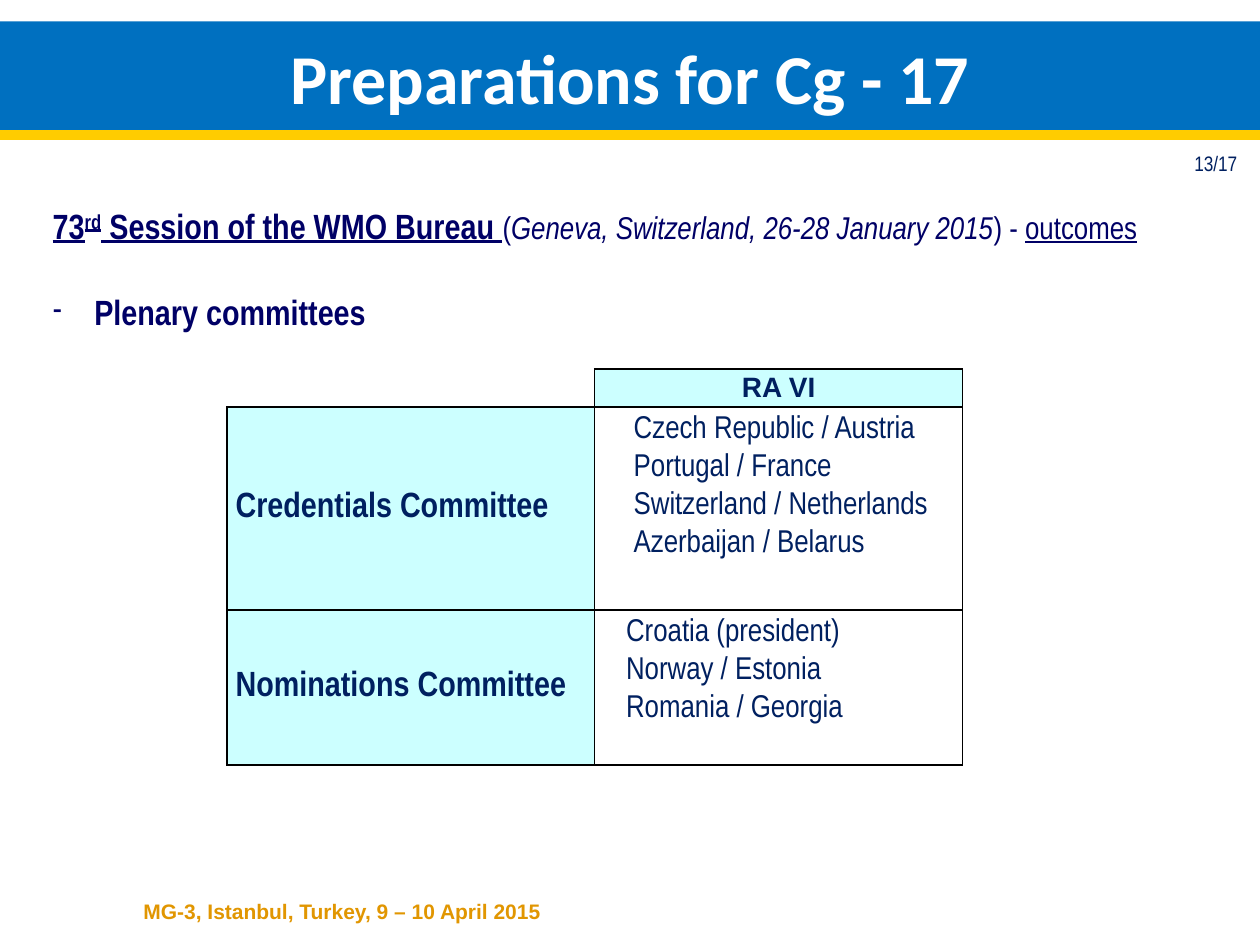
from dataclasses import dataclass

from lxml import etree
from pptx import Presentation, util as u
from pptx.dml.color import RGBColor
from pptx.enum import shapes, text
from pptx.oxml.ns import qn


@dataclass(frozen=True)
class Theme:
    banner: str = "0070C0"
    rule: str = "FFCC00"
    heading: str = "000066"
    ink: str = "002060"
    footer: str = "E19601"
    cell: str = "CCFFFF"
    white: str = "FFFFFF"
    border: str = "000000"
    narrow: str = "Arial Narrow"
    sans: str = "Arial"
    title_font: str = "Calibri"
    title: int = 40
    large: int = 20
    body: int = 18
    column_head: int = 16
    small: int = 12


THEME = Theme()
WIDTH, HEIGHT = u.Inches(10), u.Inches(7.5)
ALIGN, ANCHOR = text.PP_ALIGN, text.MSO_ANCHOR


def style(para, size, color, font=THEME.narrow, bold=False, align=ALIGN.LEFT):
    para.alignment = align
    para.font.size, para.font.name, para.font.bold = u.Pt(size), font, bold
    para.font.color.rgb = RGBColor.from_string(color)


def add_label(page, x, y, width, height):
    """Text box placed by shares of the slide's size."""
    box = page.shapes.add_textbox(int(WIDTH * x), int(HEIGHT * y),
                                  int(WIDTH * width), int(HEIGHT * height))
    box.text_frame.word_wrap = True
    return box.text_frame


def add_banner(page, title):
    banner = page.shapes.add_shape(shapes.MSO_SHAPE.RECTANGLE, 0, u.Inches(0.17),
                                   WIDTH, u.Inches(0.87))
    banner.shadow.inherit = False
    banner.fill.solid()
    banner.fill.fore_color.rgb = RGBColor.from_string(THEME.banner)
    banner.line.fill.background()
    banner.text_frame.vertical_anchor = ANCHOR.MIDDLE
    para = banner.text_frame.paragraphs[0]
    para.text = title
    style(para, THEME.title, THEME.white, THEME.title_font, True, ALIGN.CENTER)

    # Yellow rule under the banner
    rule = page.shapes.add_connector(shapes.MSO_CONNECTOR.STRAIGHT, 0, u.Inches(1.07),
                                     WIDTH, u.Inches(1.07))
    rule.line.color.rgb = RGBColor.from_string(THEME.rule)
    rule.line.width = u.Pt(6)
    etree.SubElement(rule._element.spPr, qn("a:effectLst"))


def add_span(para, words, size=THEME.body, bold=False, italic=False,
             underline=False, raised=False):
    span = para.add_run()
    span.text = words
    font = span.font
    font.size, font.bold, font.italic = u.Pt(size), bold, italic
    font.underline = underline
    if raised:
        font._element.set("baseline", "30000")


def set_indent(para, left, hanging=0.0):
    props = para._p.get_or_add_pPr()
    props.set("marL", str(u.Inches(left)))
    props.set("indent", str(-u.Inches(hanging)))
    return props


def add_heading(page):
    frame = add_label(page, 0.02, 0.21, 0.953, 0.2)
    session = frame.paragraphs[0]
    set_indent(session, 0.12)
    style(session, THEME.large, THEME.heading)
    strong = dict(size=THEME.large, bold=True, underline=True)
    add_span(session, "73", **strong)
    add_span(session, "rd", raised=True, **strong)
    add_span(session, " Session of the WMO Bureau ", **strong)
    add_span(session, "(")
    add_span(session, "Geneva, Switzerland, 26-28 January 2015", italic=True)
    add_span(session, ") - ")
    add_span(session, "outcomes", underline=True)

    topic = frame.add_paragraph()
    topic.text = "Plenary committees"
    topic.space_before = u.Pt(25)
    props = set_indent(topic, 0.45, 0.33)
    etree.SubElement(props, qn("a:buFont"), typeface=THEME.narrow)
    etree.SubElement(props, qn("a:buChar"), char="-")
    style(topic, THEME.large, THEME.heading, bold=True)


def set_borders(cell, sides):
    props = cell._tc.get_or_add_tcPr()
    for position, side in enumerate(s for s in "LRTB" if s in sides):
        line = etree.Element(qn(f"a:ln{side}"), w=str(u.Pt(1)))
        fill = etree.SubElement(line, qn("a:solidFill"))
        etree.SubElement(fill, qn("a:srgbClr"), val=THEME.border)
        props.insert(position, line)


def fill_cell(cell, lines=(), fill=None, sides="LRTB", indent=0.0, pitch=None, **look):
    cell.margin_left = cell.margin_right = u.Inches(0.07)
    cell.margin_top = cell.margin_bottom = 0
    if fill:
        cell.fill.solid()
        cell.fill.fore_color.rgb = RGBColor.from_string(fill)
        cell.vertical_anchor = ANCHOR.MIDDLE
    else:
        cell.fill.background()
    set_borders(cell, sides)
    frame = cell.text_frame
    for index, words in enumerate(lines):
        para = frame.add_paragraph() if index else frame.paragraphs[0]
        para.text = words
        set_indent(para, indent)
        if pitch:
            para.line_spacing = u.Pt(pitch)
        style(para, color=THEME.ink, **look)


def add_committees(page):
    column, heights = 2.92, (0.27, 1.61, 1.23)
    table = page.shapes.add_table(3, 2, u.Inches(1.8), u.Inches(2.93),
                                  u.Inches(2 * column), u.Inches(sum(heights))).table
    table.first_row = table.horz_banding = False
    for col in table.columns:
        col.width = u.Inches(column)
    for row, height in zip(table.rows, heights):
        row.height = u.Inches(height)

    # Column head, with an open corner beside it
    fill_cell(table.cell(0, 0), sides="RB")
    fill_cell(table.cell(0, 1), ["RA VI"], THEME.cell, size=THEME.column_head,
              font=THEME.sans, bold=True, align=ALIGN.CENTER)

    # One row for each committee
    committees = [
        ("Credentials Committee", 0.24,
         ["Czech Republic / Austria", "Portugal / France",
          "Switzerland / Netherlands", "Azerbaijan / Belarus"]),
        ("Nominations Committee", 0.18,
         ["Croatia (president)", "Norway / Estonia", "Romania / Georgia"]),
    ]
    for row, (name, indent, members) in enumerate(committees, start=1):
        fill_cell(table.cell(row, 0), [name], THEME.cell, size=THEME.large, bold=True)
        fill_cell(table.cell(row, 1), members, indent=indent, pitch=21.7,
                  size=THEME.body)


def add_notes_line(page, words, place, **look):
    para = add_label(page, *place).paragraphs[0]
    para.text = words
    style(para, THEME.small, **look)


def main():
    deck = Presentation()
    deck.slide_width, deck.slide_height = WIDTH, HEIGHT
    page = deck.slides.add_slide(deck.slide_layouts[6])
    add_heading(page)
    add_committees(page)
    add_banner(page, "Preparations for Cg - 17")
    # Footer and page number
    add_notes_line(page, "MG-3, Istanbul, Turkey, 9 – 10 April 2015",
                   (0.104, 0.944, 0.357, 0.045),
                   color=THEME.footer, font=THEME.sans, bold=True)
    add_notes_line(page, "13/17", (0.938, 0.153, 0.058, 0.045), color=THEME.ink)
    deck.save("out.pptx")


if __name__ == "__main__":
    main()
